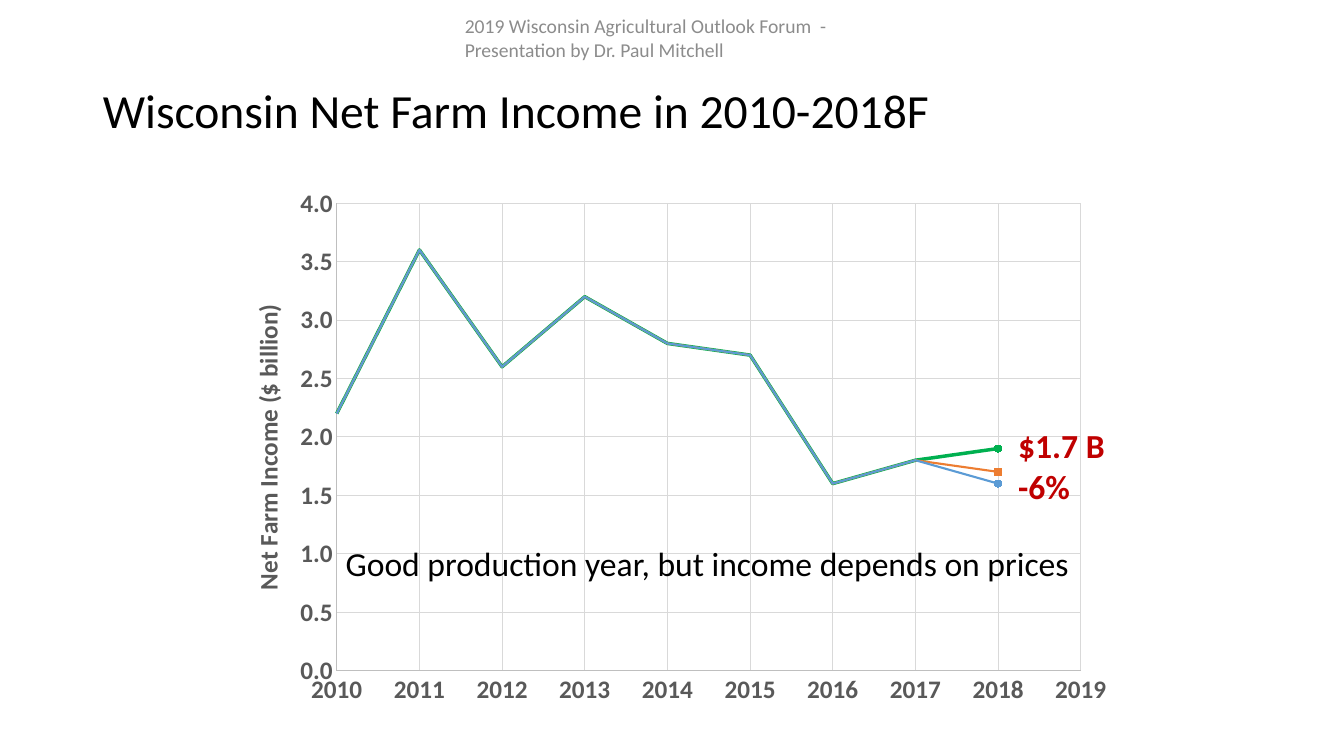
from dataclasses import dataclass

from lxml import etree
from pptx import Presentation
from pptx import util as u
from pptx.chart.data import XyChartData
from pptx.dml.color import RGBColor
from pptx.enum import chart as charts, text
from pptx.oxml.ns import qn


@dataclass(frozen=True)
class Theme:
    """Colours, font and type sizes of the slide."""
    font: str = "Calibri"
    ink: str = "000000"
    header: str = "8C8C8C"
    accent: str = "C00000"
    axis_text: str = "595959"
    axis_line: str = "BFBFBF"
    grid: str = "D9D9D9"
    low: str = "5B9BD5"
    middle: str = "ED7D31"
    high: str = "00B050"
    marker: str = "A5A5A5"
    title_size: int = 34
    callout_size: int = 24
    axis_size: int = 18
    header_size: int = 14


THEME = Theme()
YEARS = range(2010, 2019)
HISTORY = [2.2, 3.6, 2.6, 3.2, 2.8, 2.7, 1.6, 1.8]
CIRCLE, SQUARE = charts.XL_MARKER_STYLE.CIRCLE, charts.XL_MARKER_STYLE.SQUARE
FORECASTS = [
    ("Series 1", 1.6, THEME.low, 1.5, CIRCLE, THEME.marker),
    ("Series 2", 1.7, THEME.middle, 1.5, SQUARE, THEME.high),
    ("Series 3", 1.9, THEME.high, 2.5, CIRCLE, THEME.marker),
]


def inches(box):
    """Convert a left, top, width, height box to lengths."""
    return [u.Inches(length) for length in box]


def style_font(font, size, color, bold=False):
    """Apply the theme font with a size, colour and weight."""
    font.name, font.size, font.bold = THEME.font, u.Pt(size), bold
    font.color.rgb = RGBColor.from_string(color)


def style_line(line, color, width):
    """Give a line a colour and a width in points."""
    line.color.rgb = RGBColor.from_string(color)
    line.width = u.Pt(width)


def add_title(slide, box, wording):
    """Place and format the title placeholder."""
    title = slide.shapes.title
    title.left, title.top, title.width, title.height = inches(box)
    frame = title.text_frame
    frame.text = wording
    frame.vertical_anchor = text.MSO_ANCHOR.MIDDLE
    paragraph = frame.paragraphs[0]
    paragraph.alignment = text.PP_ALIGN.LEFT
    paragraph.line_spacing = 0.9
    style_font(paragraph.runs[0].font, THEME.title_size, THEME.ink)


def add_text(slide, box, wording, size, color, bold=False):
    """Add a wrapped text box and return its frame."""
    frame = slide.shapes.add_textbox(*inches(box)).text_frame
    frame.word_wrap = True
    frame.text = wording
    for paragraph in frame.paragraphs:
        style_font(paragraph.runs[0].font, size, color, bold)
    return frame


def add_header(slide, box, wording):
    """Add the grey event line at the top."""
    frame = add_text(slide, box, wording, THEME.header_size, THEME.header)
    frame.vertical_anchor = text.MSO_ANCHOR.MIDDLE
    frame.margin_left = u.Inches(box[2] / 10)


def set_layout(parent, before, **shares):
    """Fix the place of a chart part in shares of the chart."""
    for old in parent.findall(qn("c:layout")):
        parent.remove(old)
    layout = etree.Element(qn("c:layout"))
    manual = etree.SubElement(layout, qn("c:manualLayout"))
    for tag, value in shares.items():
        etree.SubElement(manual, qn("c:" + tag), val=str(value))
    parent.insert(before, layout)


def style_axis(axis, low, high, step, number_format):
    """Set the scale, labels, line and grid of an axis."""
    axis.minimum_scale, axis.maximum_scale, axis.major_unit = low, high, step
    axis.major_tick_mark = axis.minor_tick_mark = charts.XL_TICK_MARK.NONE
    axis.has_major_gridlines = True
    axis.tick_labels.number_format = number_format
    axis.tick_labels.number_format_is_linked = False
    style_font(axis.tick_labels.font, THEME.axis_size, THEME.axis_text, True)
    style_line(axis.format.line, THEME.axis_line, 0.75)
    style_line(axis.major_gridlines.format.line, THEME.grid, 0.75)


def add_axis_title(axis, wording):
    """Add the upright title beside the value axis."""
    title = axis.axis_title
    frame = title.text_frame
    frame.text = wording
    style_font(frame.paragraphs[0].runs[0].font, THEME.axis_size, THEME.axis_text, True)
    body = title._element.find(".//" + qn("a:bodyPr"))
    body.set("rot", "-5400000")
    body.set("vert", "horz")
    set_layout(title._element, 1, xMode="edge", yMode="edge", x=0.03, y=0.23)


def style_series(series, color, width, marker_style, marker_color):
    """Draw a straight line that ends in one marker."""
    series.smooth = False
    style_line(series.format.line, color, width)
    end = series.points[len(YEARS) - 1]
    style_line(end.format.line, color, width)
    end.marker.style, end.marker.size = marker_style, 5
    end.marker.format.fill.solid()
    end.marker.format.fill.fore_color.rgb = RGBColor.from_string(marker_color)
    style_line(end.marker.format.line, marker_color, 0.75)


def add_income_chart(slide, box):
    """Add the income lines with three forecasts for the last year."""
    data = XyChartData()
    for name, forecast, *_ in FORECASTS:
        series = data.add_series(name)
        for year, income in zip(YEARS, HISTORY + [forecast]):
            series.add_data_point(year, income)
    kind = charts.XL_CHART_TYPE.XY_SCATTER_LINES_NO_MARKERS
    chart = slide.shapes.add_chart(kind, *inches(box), data).chart
    chart.has_legend = chart.has_title = False
    style_font(chart.font, THEME.axis_size, THEME.ink, True)
    chart.plots[0].vary_by_categories = False
    style_axis(chart.category_axis, 2010, 2019, 1, "0")
    style_axis(chart.value_axis, 0, 4, 0.5, "0.0")
    add_axis_title(chart.value_axis, "Net Farm Income ($ billion)")
    for series, (_, _, *style) in zip(chart.plots[0].series, FORECASTS):
        style_series(series, *style)
    plot_area = chart._chartSpace.find(".//" + qn("c:plotArea"))
    set_layout(plot_area, 0, layoutTarget="inner", xMode="edge", yMode="edge",
               x=0.13, y=0.05, w=0.82, h=0.87)


def build_income_slide(presentation):
    """Add the slide with its chart, title and remarks."""
    slide = presentation.slides.add_slide(presentation.slide_layouts[5])
    add_income_chart(slide, (2.17, 1.75, 9, 5.33))
    add_title(slide, (0.92, 0.4, 11.5, 1.45), "Wisconsin Net Farm Income in 2010-2018F")
    add_text(slide, (10, 4.17, 1.5, 0.91), "$1.7 B\n-6%",
             THEME.callout_size, THEME.accent, True)
    add_text(slide, (3.33, 5.34, 8.07, 0.5),
             "Good production year, but income depends on prices",
             THEME.callout_size, THEME.ink)
    add_header(slide, (4.16, 0, 4.5, 0.75),
               "2019 Wisconsin Agricultural Outlook Forum  - Presentation by Dr. Paul Mitchell")


def main():
    """Build and save the presentation."""
    presentation = Presentation()
    presentation.slide_width, presentation.slide_height = u.Inches(13.33), u.Inches(7.5)
    build_income_slide(presentation)
    presentation.save("out.pptx")


if __name__ == "__main__":
    main()
